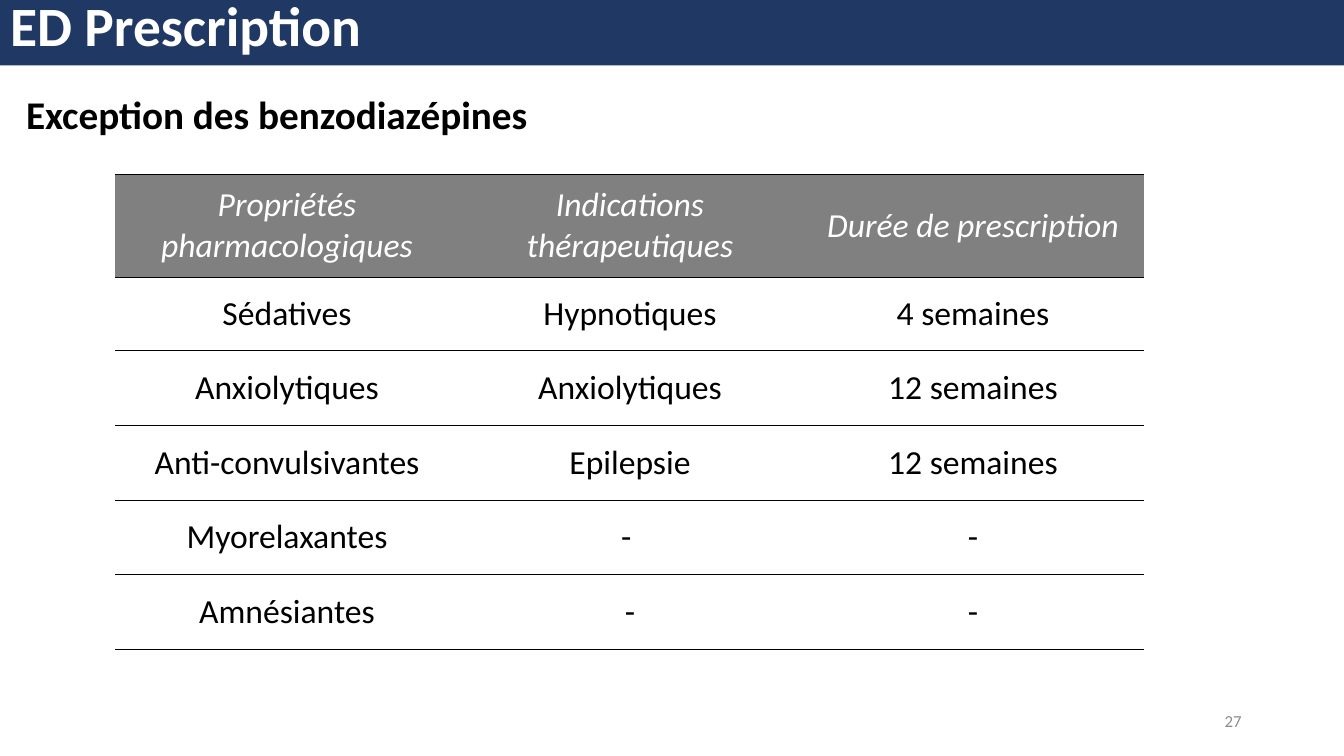
from lxml import etree
from pptx import Presentation
from pptx.dml.color import RGBColor
from pptx.enum import text
from pptx.oxml import ns
from pptx.util import Pt

NAVY, GREY, WHITE, BLACK, PALE = "203864", "808080", "FFFFFF", "000000", "8C8C8C"


def colour(value):
    return RGBColor.from_string(value)


class SlideBuilder:
    font = "Calibri"

    def __init__(self, slide):
        self.slide = slide

    def set_words(self, frame, words, size, ink, align=text.PP_ALIGN.LEFT,
                  bold=False, italic=False):
        frame.text = words
        frame.word_wrap = True
        paragraph = frame.paragraphs[0]
        paragraph.alignment = align
        font = paragraph.font
        font.name, font.size = self.font, Pt(size)
        font.bold, font.italic = bold, italic
        font.color.rgb = colour(ink)
        return paragraph

    def title(self, words, width, height):
        banner = self.slide.shapes.title
        banner.left, banner.top, banner.width, banner.height = 0, 0, Pt(width), Pt(height)
        banner.fill.solid()
        banner.fill.fore_color.rgb = colour(NAVY)
        frame = banner.text_frame
        frame.auto_size = text.MSO_AUTO_SIZE.NONE
        frame.vertical_anchor = text.MSO_ANCHOR.MIDDLE
        self.set_words(frame, words, 39.6, WHITE, bold=True).line_spacing = 0.7

    def label(self, words, box, size, ink, **style):
        frame = self.slide.shapes.add_textbox(*map(Pt, box)).text_frame
        frame.vertical_anchor = text.MSO_ANCHOR.MIDDLE
        self.set_words(frame, words, size, ink, **style)

    def rule_cell(self, cell):
        """Draw the top and bottom rules and hide the side borders."""
        properties = cell._tc.get_or_add_tcPr()
        for side in ("L", "R", "T", "B"):
            line = etree.SubElement(properties, ns.qn("a:ln" + side), w=str(Pt(1)))
            if side in "LR":
                etree.SubElement(line, ns.qn("a:noFill"))
            else:
                fill = etree.SubElement(line, ns.qn("a:solidFill"))
                etree.SubElement(fill, ns.qn("a:srgbClr"), val=BLACK)

    def table(self, rows, left, top, column_width, heights):
        columns = len(rows[0])
        grid = self.slide.shapes.add_table(
            len(rows), columns, Pt(left), Pt(top),
            Pt(column_width * columns), Pt(sum(heights))).table
        for column in grid.columns:
            column.width = Pt(column_width)
        for r, (entries, height) in enumerate(zip(rows, heights)):
            header = r == 0
            grid.rows[r].height = Pt(height)
            for c, words in enumerate(entries):
                cell = grid.cell(r, c)
                self.rule_cell(cell)
                cell.fill.solid()
                cell.fill.fore_color.rgb = colour(GREY if header else WHITE)
                cell.vertical_anchor = text.MSO_ANCHOR.MIDDLE
                self.set_words(cell.text_frame, words, 24, WHITE if header else BLACK,
                               align=text.PP_ALIGN.CENTER, italic=header)


def main():
    deck = Presentation()
    deck.slide_width, deck.slide_height = Pt(960), Pt(540)
    builder = SlideBuilder(deck.slides.add_slide(deck.slide_layouts[5]))

    # Title banner and heading
    builder.title("ED Prescription", 960, 46.8)
    builder.label("Exception des benzodiazépines", (11.5, 60.5, 486, 41), 28, BLACK, bold=True)

    # Benzodiazepine properties, indications and durations
    prescriptions = [
        ("Propriétés pharmacologiques", "Indications thérapeutiques", "Durée de prescription"),
        ("Sédatives", "Hypnotiques", "4 semaines"),
        ("Anxiolytiques", "Anxiolytiques", "12 semaines"),
        ("Anti-convulsivantes", "Epilepsie", "12 semaines"),
        ("Myorelaxantes", "- ", "-"),
        ("Amnésiantes", "-", "-"),
    ]
    builder.table(prescriptions, 82.5, 124.5, 245, [74, 52] + [53.4] * 4)

    # Page number
    builder.label("27", (678, 500.5, 216, 28.8), 12, PALE, align=text.PP_ALIGN.RIGHT)

    deck.save("out.pptx")


if __name__ == "__main__":
    main()
